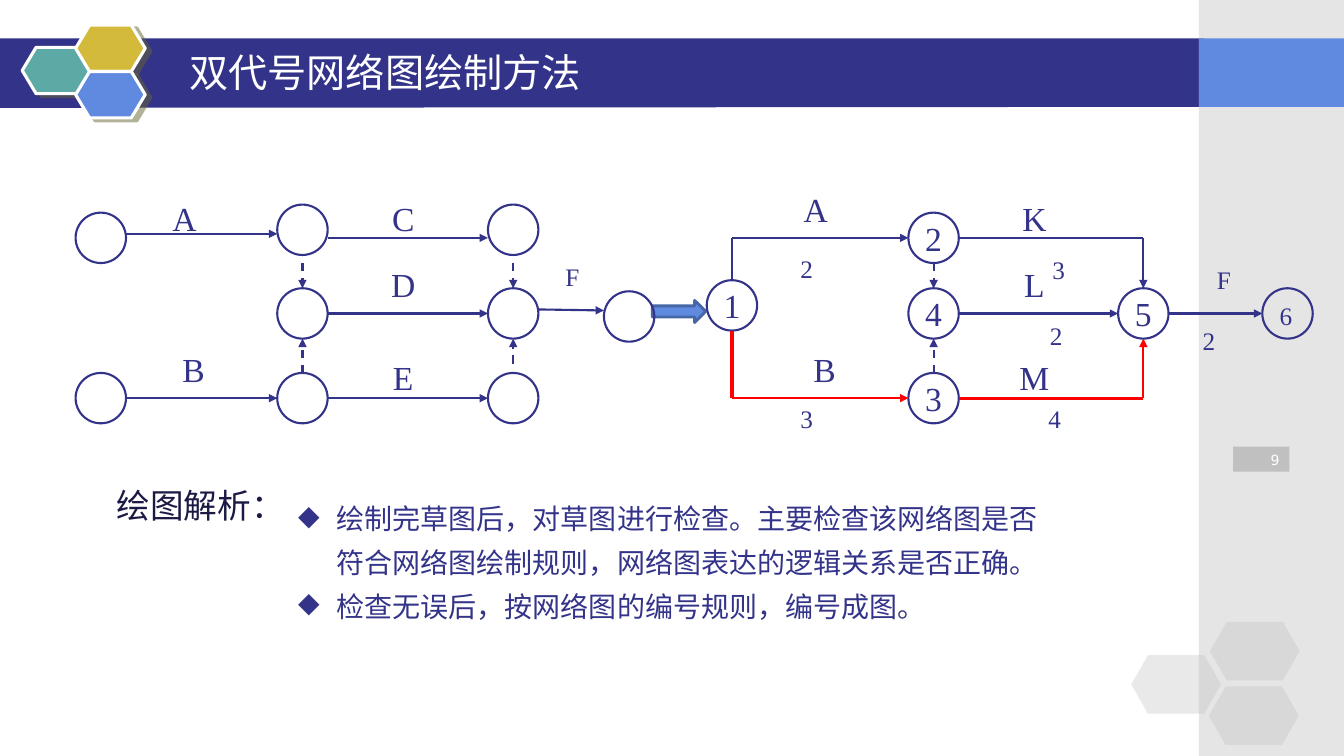
"""Build the slide on drawing activity-on-arrow network diagrams."""
from lxml import etree
from pptx import Presentation
from pptx.dml.color import RGBColor
from pptx.enum import dml, shapes, text
from pptx.oxml import ns
from pptx.util import Inches, Pt

NAVY = RGBColor(0x33, 0x33, 0x89)
INK = RGBColor(0x1A, 0x1A, 0x44)
BLUE = RGBColor(0x5F, 0x8A, 0xDF)
EDGE = RGBColor(0x46, 0x66, 0xA5)
TEAL = RGBColor(0x5D, 0xA9, 0xA5)
GOLD = RGBColor(0xD4, 0xBA, 0x3A)
GREY = RGBColor(0xC0, 0xC0, 0xC0)
RED = RGBColor(0xFF, 0, 0)
WHITE = RGBColor(0xFF, 0xFF, 0xFF)
SERIF, HAN, SANS = "Times New Roman", "Noto Sans CJK SC", "DejaVu Sans"
KIND = shapes.MSO_SHAPE
LEFT, CENTER, RIGHT = text.PP_ALIGN.LEFT, text.PP_ALIGN.CENTER, text.PP_ALIGN.RIGHT
NODE = 0.5

TITLE = "双代号网络图绘制方法"
HEADING = "绘图解析："
POINTS = [
    "绘制完草图后，对草图进行检查。主要检查该网络图是否符合网络图绘制规则，网络图表达的逻辑关系是否正确。",
    "检查无误后，按网络图的编号规则，编号成图。",
]
BAND = [(-0.01, 0.38), (11.94, 0.38), (11.93, 1.06), (-0.01, 1.07)]
BADGE = [(0.22, 0.47, TEAL), (0.75, 0.25, GOLD), (0.75, 0.71, BLUE)]
CORNER = [(11.22, 6.5), (12, 6.17), (11.99, 6.81)]

DRAFT_NODES = [(0.75, 2.11), (2.75, 2.03), (4.84, 2.03), (2.75, 2.86), (4.84, 2.86),
               (0.75, 3.7), (2.75, 3.7), (4.84, 3.7), (5.99, 2.89)]
FINAL_NODES = [("1", 7.01, 2.78), ("2", 9.01, 2.11), ("3", 9.01, 3.7),
               ("4", 9.01, 2.86), ("5", 11.09, 2.86)]
ACTIVITIES = [("A", 1.58, 1.95), ("B", 1.67, 3.45), ("C", 3.75, 1.95), ("D", 3.75, 2.61),
              ("E", 3.75, 3.53), ("A", 7.84, 1.86), ("B", 7.93, 3.45), ("K", 10.01, 1.95),
              ("L", 10.01, 2.61), ("M", 10.01, 3.53)]
SMALL_LABELS = [("F", 5.51, 2.54, 0.3), ("2", 7.84, 2.46, 0.36), ("3", 7.84, 3.95, 0.55),
                ("3", 10.34, 2.47, 0.31), ("2", 10.32, 3.13, 0.19), ("4", 10.3, 3.95, 0.37),
                ("F", 11.97, 2.57, 0.3), ("2", 11.83, 3.18, 0.31)]
ARROWS = [(1.25, 2.32, 2.75, 2.32), (3.25, 2.36, 4.84, 2.36), (1.25, 3.95, 2.75, 3.95),
          (3.25, 3.95, 4.84, 3.95), (3.25, 3.11, 4.84, 3.11), (5.33, 3.07, 5.99, 3.08),
          (7.26, 2.36, 9.01, 2.36), (9.51, 3.11, 11.09, 3.11), (11.34, 2.36, 11.34, 2.86),
          (11.59, 3.11, 12.52, 3.11)]
DUMMIES = [(3, 2.61, 3, 2.86), (3, 3.7, 3, 3.36), (5.09, 2.61, 5.09, 2.86),
           (5.09, 3.61, 5.09, 3.36), (9.26, 2.61, 9.26, 2.86), (9.26, 3.7, 9.26, 3.36)]
STEMS = [(7.26, 2.78, 7.26, 2.36), (9.51, 2.36, 11.34, 2.36)]
CRITICAL_ARROWS = [(7.26, 3.95, 9.01, 3.95), (11.34, 3.95, 11.34, 3.36)]
CRITICAL_STEMS = [(7.26, 3.28, 7.26, 3.95), (9.51, 3.95, 11.34, 3.95)]

deck = Presentation()
deck.slide_width, deck.slide_height = Inches(13.33), Inches(7.5)
page = deck.slides.add_slide(deck.slide_layouts[6])


def child(parent, tag, **attributes):
    return etree.SubElement(parent, ns.qn("a:" + tag), attributes)


def paint(shape, fill=None, line=None, width=1.5, alpha=None):
    shape.shadow.inherit = False
    if fill is None:
        shape.fill.background()
    else:
        shape.fill.solid()
        shape.fill.fore_color.rgb = fill
    if alpha:
        color = shape._element.spPr.find(ns.qn("a:solidFill"))[0]
        child(color, "alpha", val=str(alpha * 1000))
    if line is None:
        shape.line.fill.background()
    else:
        shape.line.color.rgb = line
        shape.line.width = Pt(width)
    return shape


def add_shape(kind, left, top, width, height, *style, **options):
    shape = page.shapes.add_shape(kind, *map(Inches, (left, top, width, height)))
    return paint(shape, *style, **options)


def add_hexagon(left, top, width, height, bend, *style, **options):
    hexagon = add_shape(KIND.HEXAGON, left, top, width, height, *style, **options)
    hexagon.adjustments[0] = bend
    return hexagon


def write(shape, lines, size, font=SERIF, color=NAVY, align=LEFT,
          anchor=text.MSO_ANCHOR.TOP, wrap=True):
    frame = shape.text_frame
    frame.word_wrap, frame.vertical_anchor = wrap, anchor
    frame.text = "\n".join(lines)
    for para in frame.paragraphs:
        para.alignment = align
        para.font.size, para.font.name = Pt(size), font
        para.font.color.rgb = color
        child(para._p.pPr.find(ns.qn("a:defRPr")), "ea", typeface=font)
    return frame


def write_centered(shape, words, **options):
    write(shape, [words], 24, align=CENTER, anchor=text.MSO_ANCHOR.MIDDLE, wrap=False, **options)


def add_text(left, top, width, height, lines, size, **options):
    box = page.shapes.add_textbox(*map(Inches, (left, top, width, height)))
    return write(box, lines, size, **options)


def add_node(left, top):
    return add_shape(KIND.OVAL, left, top, NODE, NODE, None, NAVY)


def add_lines(ends, color=NAVY, width=1.5, arrow=True, dashed=False):
    for points in ends:
        line = page.shapes.add_connector(shapes.MSO_CONNECTOR.STRAIGHT, *map(Inches, points))
        line.line.color.rgb, line.line.width = color, Pt(width)
        if dashed:
            line.line.dash_style = dml.MSO_LINE.DASH
        if arrow:
            child(line.line._get_or_add_ln(), "tailEnd", type="triangle")
        child(line._element.spPr, "effectLst")


outline = [(Inches(x), Inches(y)) for x, y in BAND]
builder = page.shapes.build_freeform(*outline[0])
builder.add_line_segments(outline[1:])
paint(builder.convert_to_shape(), NAVY)
add_shape(KIND.RECTANGLE, 11.89, 0, 1.44, 7.5, GREY, alpha=40)
add_shape(KIND.RECTANGLE, 11.89, 0.38, 1.44, 0.68, BLUE)
for left, top, fill in BADGE:
    hexagon = add_hexagon(left, top, 0.69, 0.46, 0.3, fill, WHITE, 2.25)
    effects = hexagon._element.spPr.find(ns.qn("a:effectLst"))
    shadow = child(effects, "outerShdw", dist=str(Pt(4.5)), dir=str(27 * 60000),
                   algn="ctr", rotWithShape="0")
    child(child(shadow, "srgbClr", val="666633"), "alpha", val="50000")
for left, top in CORNER:
    add_hexagon(left, top, 0.89, 0.58, 0.286, GREY, alpha=35)
number = add_shape(KIND.RECTANGLE, 12.23, 4.43, 0.56, 0.25, GREY)
write(number, ["9"], 10, font=SANS, color=WHITE, align=RIGHT)
add_text(1.78, 0.42, 9.67, 0.58, [TITLE], 28, font=HAN, color=WHITE,
         anchor=text.MSO_ANCHOR.MIDDLE)

add_shape(KIND.RIGHT_ARROW, 6.47, 2.98, 0.53, 0.22, BLUE, EDGE, 2)
for left, top in DRAFT_NODES:
    add_node(left, top)
for name, left, top in FINAL_NODES:
    write_centered(add_node(left, top), name)
write(add_node(12.52, 2.86), ["6"], 18)
add_lines(ARROWS)
add_lines(DUMMIES, dashed=True)
add_lines(STEMS, arrow=False)
add_lines(CRITICAL_ARROWS, RED)
add_lines(CRITICAL_STEMS, RED, 2.25, arrow=False)
for name, left, top in ACTIVITIES:
    write_centered(add_shape(KIND.OVAL, left, top, NODE, 0.42), name)
for name, left, top, width in SMALL_LABELS:
    add_text(left, top, width, 0.4, [name], 18)

write_centered(add_shape(KIND.OVAL, 1.67, 4.68, 0.64, 0.67), HEADING, font=HAN, color=INK)
body = add_text(2.86, 4.83, 7.8, 1.41, POINTS, 20, font=HAN)
for para in body.paragraphs:
    para.line_spacing = 1.3
    props = para._p.pPr
    props.set("marL", str(Inches(0.38)))
    props.set("indent", str(-Inches(0.38)))
    props.find(ns.qn("a:defRPr")).addprevious(child(props, "buChar", char="◆"))

deck.save("out.pptx")
